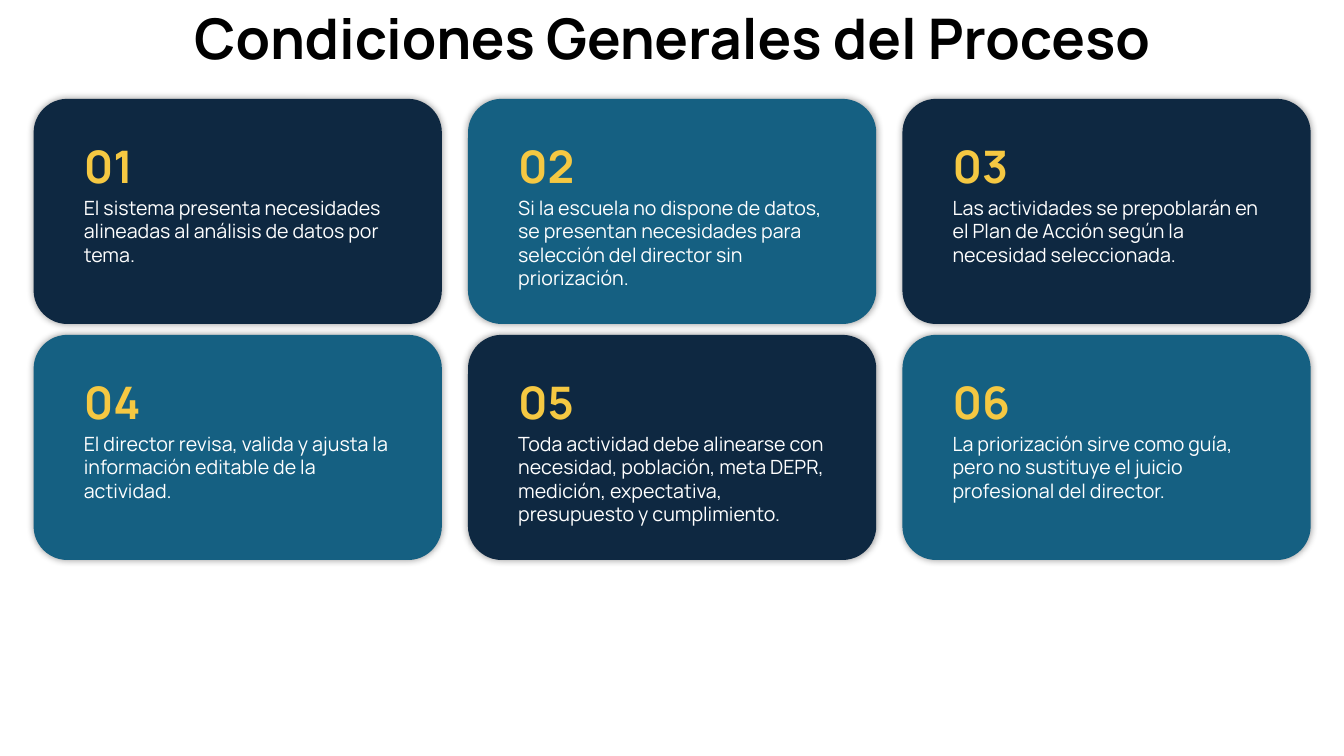
from lxml import etree
from pptx import Presentation
from pptx.dml.color import RGBColor
from pptx.enum import shapes, text
from pptx.oxml import ns
from pptx.util import Pt

TITLE = "Condiciones Generales del Proceso"
CARDS = [
    "El sistema presenta necesidades alineadas al análisis de datos por tema.",
    "Si la escuela no dispone de datos, se presentan necesidades para "
    "selección del director sin priorización.",
    "Las actividades se prepoblarán en el Plan de Acción según la "
    "necesidad seleccionada.",
    "El director revisa, valida y ajusta la información editable de la "
    "actividad.",
    "Toda actividad debe alinearse con necesidad, población, meta DEPR, "
    "medición, expectativa, presupuesto y cumplimiento.",
    "La priorización sirve como guía, pero no sustituye el juicio "
    "profesional del director.",
]
HEX = {"navy": "0E2841", "teal": "156082", "gold": "F5C842",
       "white": "FFFFFF", "black": "000000"}
FACE = "Manrope"

# Card grid, in points
COLS = 3
LEFT, TOP = 24, 70.6
WIDE, HIGH = 291.6, 160.8
STEP_X, STEP_Y = 310.3, 168.6
PADS = {"margin_left": 28.8, "margin_top": 21.6,
        "margin_right": 28.8, "margin_bottom": 21.6}


def color(name):
    return RGBColor.from_string(HEX[name])


def write(para, words, size, tint, bold, align):
    para.alignment = align
    run = para.add_run()
    run.text = words
    style = {"name": FACE, "size": Pt(size), "bold": bold}
    for key, value in style.items():
        setattr(run.font, key, value)
    run.font.color.rgb = color(tint)


def glow(shape):
    """Soft even shadow around a card."""
    shape.shadow.inherit = False
    effects = shape._element.spPr.find(ns.qn("a:effectLst"))
    outer = etree.SubElement(effects, ns.qn("a:outerShdw"), blurRad=str(Pt(5)),
                             dist="0", dir="0", algn="ctr", rotWithShape="0")
    tint = etree.SubElement(outer, ns.qn("a:srgbClr"), val=HEX["black"])
    etree.SubElement(tint, ns.qn("a:alpha"), val="40000")


def add_card(slide, index, words):
    row, col = divmod(index, COLS)
    card = slide.shapes.add_shape(
        shapes.MSO_SHAPE.ROUNDED_RECTANGLE,
        Pt(LEFT + col * STEP_X), Pt(TOP + row * STEP_Y), Pt(WIDE), Pt(HIGH))
    card.adjustments[0] = 0.15
    card.fill.solid()
    card.fill.fore_color.rgb = color("teal" if index % 2 else "navy")
    card.line.fill.background()
    glow(card)

    frame = card.text_frame
    frame.word_wrap = True
    frame.vertical_anchor = text.MSO_ANCHOR.TOP
    for key, value in PADS.items():
        setattr(frame, key, Pt(value))
    left = text.PP_ALIGN.LEFT
    write(frame.paragraphs[0], f"{index + 1:02}", 32, "gold", True, left)
    body = frame.add_paragraph()
    body.space_before = Pt(2)
    write(body, words, 14, "white", False, left)


def main():
    deck = Presentation()
    deck.slide_width, deck.slide_height = Pt(960), Pt(540)
    slide = deck.slides.add_slide(deck.slide_layouts[5])

    # Title
    title = slide.shapes.title
    spot = {"left": 66, "top": -12.2, "width": 828, "height": 82.8}
    for key, value in spot.items():
        setattr(title, key, Pt(value))
    frame = title.text_frame
    frame.word_wrap = True
    frame.vertical_anchor = text.MSO_ANCHOR.MIDDLE
    head = frame.paragraphs[0]
    head.line_spacing = 0.9
    write(head, TITLE, 40, "black", True, text.PP_ALIGN.CENTER)

    # Cards
    for index, words in enumerate(CARDS):
        add_card(slide, index, words)

    deck.save("out.pptx")


if __name__ == "__main__":
    main()
